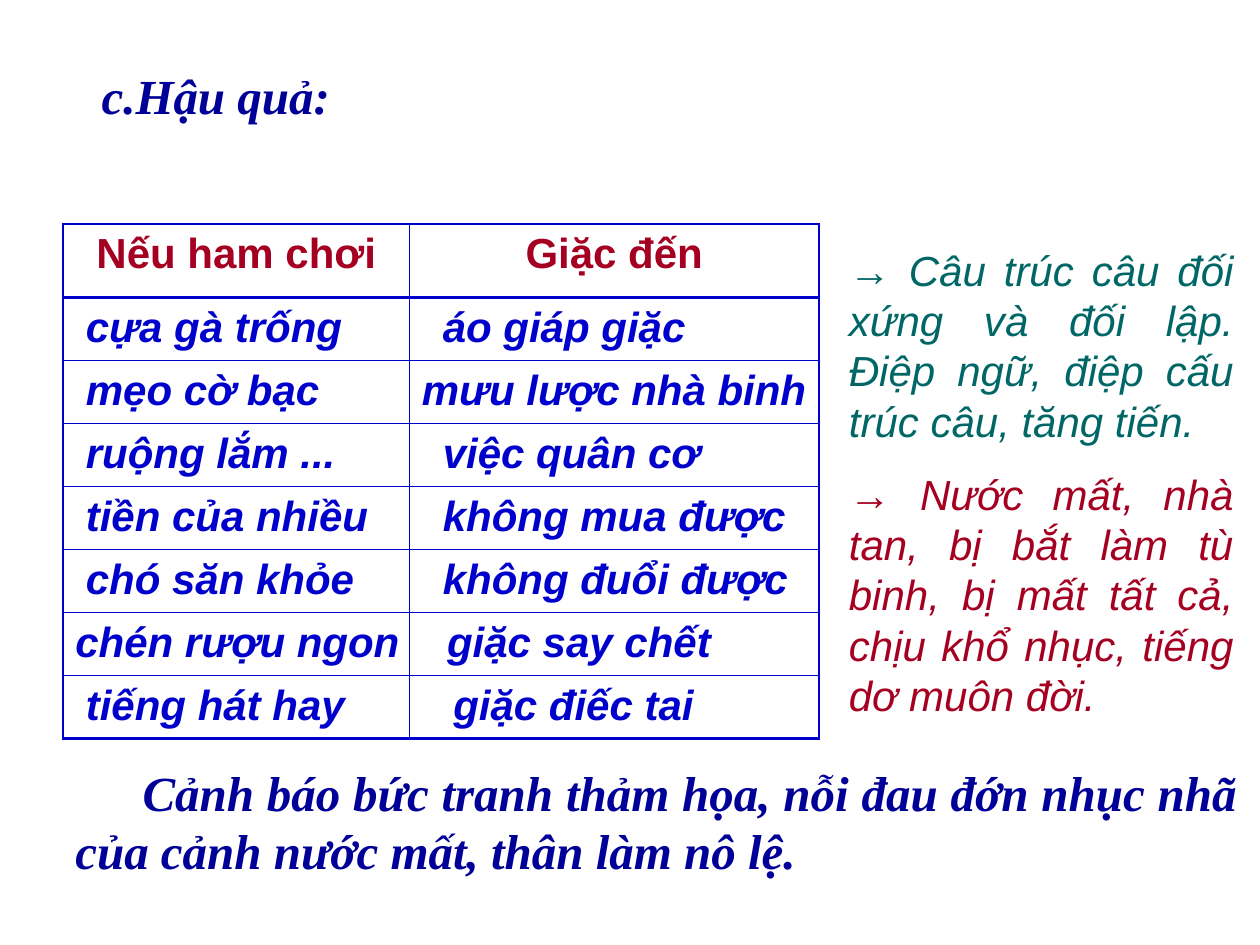
from dataclasses import dataclass
from typing import NamedTuple

from lxml import etree
from pptx import Presentation
from pptx import util as u
from pptx.dml.color import RGBColor
from pptx.enum import text
from pptx.oxml import ns

UNIT = u.Inches(1) / 12  # the slide is a grid of 120 columns by 90 rows
COLUMNS, ROWS = 120, 90


@dataclass(frozen=True)
class Theme:
    navy: str = "000099"
    blue: str = "0000CC"
    red: str = "A50021"
    teal: str = "006666"
    sans: str = "Arial"
    serif: str = "Times New Roman"
    body: int = 24
    display: int = 28
    inner_line: float = 1
    outer_line: float = 1.5


class Box(NamedTuple):
    left: float
    top: float
    width: float
    height: float


class Style(NamedTuple):
    font: str
    size: int
    color: str
    bold: bool = True
    italic: bool = True
    align: text.PP_ALIGN = text.PP_ALIGN.LEFT
    indent: float = 0


class Pair(NamedTuple):
    cause: str
    result: str
    cause_left: float = 7
    result_left: float = 41


THEME = Theme()
JUSTIFY = text.PP_ALIGN.JUSTIFY
TITLE = Style(THEME.serif, THEME.display, THEME.navy)
CLOSING = TITLE._replace(align=JUSTIFY, indent=6.4)
ENTRY = Style(THEME.sans, THEME.body, THEME.blue)
HEADER = ENTRY._replace(color=THEME.red, italic=False, align=text.PP_ALIGN.CENTER)
NOTE = ENTRY._replace(bold=False, align=JUSTIFY)

TABLE_LEFT, TABLE_TOP = 6, 21.33
TABLE_COLUMNS = (33, 39)
HEADER_HEIGHT, ROW_HEIGHT = 7, 6
ENTRY_TOP = 28
HEADERS = ("Nếu ham chơi", "Giặc đến")
PAIRS = (
    Pair("cựa gà trống", "áo giáp giặc"),
    Pair("mẹo cờ bạc", "mưu lược nhà binh", result_left=39),
    Pair("ruộng lắm ...", "việc quân cơ"),
    Pair("tiền của nhiều", "không mua được"),
    Pair("chó săn khỏe", "không đuổi được"),
    Pair("chén rượu ngon", "giặc say chết", 6, 41.4),
    Pair("tiếng hát hay", "giặc điếc tai", result_left=42),
)


def grid(n: float) -> int:
    return round(n * UNIT)


def write(tf, words: str, style: Style) -> None:
    p = tf.paragraphs[0]
    p.text = words
    p.alignment = style.align
    if style.indent:
        p._p.get_or_add_pPr().set("indent", str(grid(style.indent)))
    font = p.font
    font.name, font.size = style.font, u.Pt(style.size)
    font.bold, font.italic = style.bold, style.italic
    font.color.rgb = RGBColor.from_string(style.color)


def add_text(s, box: Box, words: str, style: Style) -> None:
    tf = s.shapes.add_textbox(*map(grid, box)).text_frame
    tf.word_wrap = True
    tf.auto_size = text.MSO_AUTO_SIZE.SHAPE_TO_FIT_TEXT
    write(tf, words, style)


def set_borders(cell, widths: dict[str, float]) -> None:
    """Put the border lines ahead of the cell's fill, as the schema requires."""
    props = cell._tc.get_or_add_tcPr()
    for i, (side, width) in enumerate(widths.items()):
        line = etree.Element(ns.qn(f"a:ln{side}"), w=str(u.Pt(width)))
        fill = etree.SubElement(line, ns.qn("a:solidFill"))
        etree.SubElement(fill, ns.qn("a:srgbClr"), val=THEME.blue)
        props.insert(i, line)


def add_table(s) -> None:
    heights = [HEADER_HEIGHT] + [ROW_HEIGHT] * len(PAIRS)
    box = Box(TABLE_LEFT, TABLE_TOP, sum(TABLE_COLUMNS), sum(heights))
    table = s.shapes.add_table(
        len(heights), len(TABLE_COLUMNS), *map(grid, box)).table
    table.first_row = table.horz_banding = False
    for column, width in zip(table.columns, TABLE_COLUMNS):
        column.width = grid(width)
    last_row, last_column = len(heights) - 1, len(TABLE_COLUMNS) - 1
    for i, height in enumerate(heights):
        table.rows[i].height = grid(height)
        for j in range(len(TABLE_COLUMNS)):
            cell = table.cell(i, j)
            cell.fill.background()
            thick = {"L": j == 0, "R": j == last_column,
                     "T": i <= 1, "B": i in (0, last_row)}
            set_borders(cell, {side: THEME.outer_line if on else THEME.inner_line
                               for side, on in thick.items()})
    for j, words in enumerate(HEADERS):
        write(table.cell(0, j).text_frame, words, HEADER)


def add_entries(s) -> None:
    for i, pair in enumerate(PAIRS):
        top = ENTRY_TOP + i * ROW_HEIGHT
        add_text(s, Box(pair.cause_left, top, 35, ROW_HEIGHT), pair.cause, ENTRY)
        add_text(s, Box(pair.result_left, top, 41, ROW_HEIGHT), pair.result, ENTRY)


def main() -> None:
    prs = Presentation()
    prs.slide_width, prs.slide_height = grid(COLUMNS), grid(ROWS)
    s = prs.slides.add_slide(prs.slide_layouts[6])
    add_text(s, Box(6, 72, 113, 12.5),
             "Cảnh báo bức tranh thảm họa, nỗi đau đớn nhục nhã "
             "của cảnh nước mất, thân làm nô lệ.", CLOSING)
    add_text(s, Box(8.5, 5.67, 108, 6.8), "c.Hậu quả:", TITLE)
    add_table(s)
    add_entries(s)
    add_text(s, Box(79.67, 22.67, 39, 20.4),
             "→ Câu trúc câu đối xứng và đối lập. "
             "Điệp ngữ, điệp cấu trúc câu, tăng tiến.",
             NOTE._replace(color=THEME.teal))
    add_text(s, Box(79.67, 44, 39, 25.2),
             "→ Nước mất, nhà tan, bị bắt làm tù binh, bị mất tất cả, "
             "chịu khổ nhục, tiếng dơ muôn đời.",
             NOTE._replace(color=THEME.red))
    prs.save("out.pptx")


if __name__ == "__main__":
    main()
